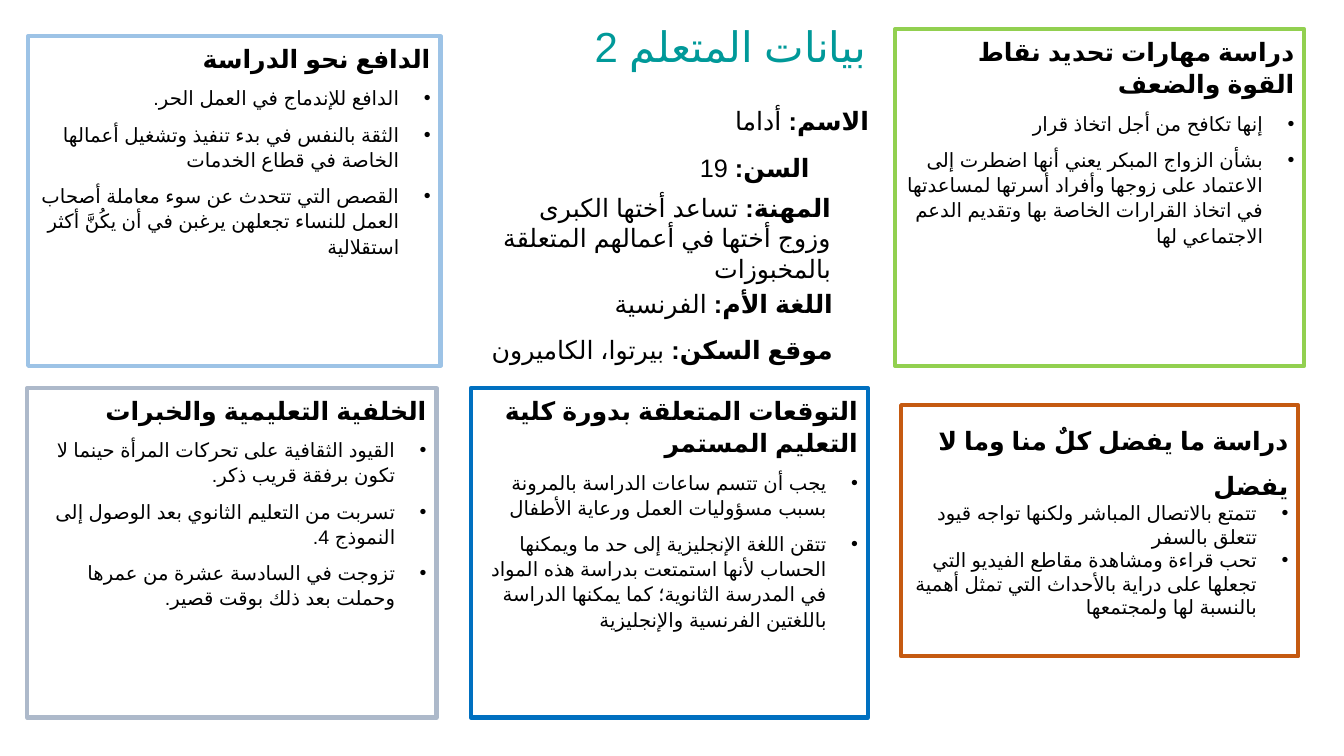
import pptx
import pptx.util
import pptx.dml.color
import pptx.enum.shapes
import pptx.enum.text
import pptx.oxml.ns
import lxml.etree

WIDE = pptx.util.Inches(13.33)
HIGH = pptx.util.Inches(7.5)
COLS = ROWS = 100
FONT = "Lato"
SCRIPT = "Arial"
HEAD, BODY, TITLE = 18, 14, 30
HUES = {
    "ink": "000000",
    "paper": "FFFFFF",
    "teal": "009999",
    "blue": "0070C0",
    "sky": "9DC3E6",
    "green": "92D050",
    "gray": "ADB9CA",
    "rust": "C55A11",
}

CARDS = [
    ("blue", (35.03, 51.33, 29.55, 43.6), "التوقعات المتعلقة بدورة كلية التعليم المستمر", [
        "يجب أن تتسم ساعات الدراسة بالمرونة بسبب مسؤوليات العمل ورعاية الأطفال",
        "تتقن اللغة الإنجليزية إلى حد ما ويمكنها الحساب لأنها استمتعت بدراسة هذه المواد "
        "في المدرسة الثانوية؛ كما يمكنها الدراسة باللغتين الفرنسية والإنجليزية",
    ]),
    ("sky", (2.1, 4.8, 30.68, 43.6), "الدافع نحو الدراسة", [
        "الدافع للإندماج في العمل الحر.",
        "الثقة بالنفس في بدء تنفيذ وتشغيل أعمالها الخاصة في قطاع الخدمات",
        "القصص التي تتحدث عن سوء معاملة أصحاب العمل للنساء تجعلهن يرغبن في أن يكُنَّ أكثر استقلالية",
    ]),
    ("green", (66.6, 3.87, 30.45, 44.53), "دراسة مهارات تحديد نقاط القوة والضعف", [
        "إنها تكافح من أجل اتخاذ قرار",
        "بشأن الزواج المبكر يعني أنها اضطرت إلى الاعتماد على زوجها وأفراد أسرتها لمساعدتها "
        "في اتخاذ القرارات الخاصة بها وتقديم الدعم الاجتماعي لها",
    ]),
    ("gray", (2.03, 51.33, 30.45, 43.6), "الخلفية التعليمية والخبرات", [
        "القيود الثقافية على تحركات المرأة حينما لا تكون برفقة قريب ذكر.",
        "تسربت من التعليم الثانوي بعد الوصول إلى النموذج 4.",
        "تزوجت في السادسة عشرة من عمرها وحملت بعد ذلك بوقت قصير.",
    ]),
]
LIKES = ("rust", (67.05, 53.6, 29.55, 33.2), "دراسة ما يفضل كلٌ منا وما لا يفضل", [
    "تتمتع بالاتصال المباشر ولكنها تواجه قيود تتعلق بالسفر",
    "تحب قراءة ومشاهدة مقاطع الفيديو التي تجعلها على دراية بالأحداث التي تمثل أهمية "
    "بالنسبة لها ولمجتمعها",
])
FACTS = [
    ((37.2, 13.33, 28.2, 5.33), "الاسم:", " أداما"),
    ((37.2, 19.47, 23.78, 5.33), "السن:", " 19"),
    ((36.68, 24.8, 25.88, 13.47), "المهنة:",
     " تساعد أختها الكبرى وزوج أختها في أعمالهم المتعلقة بالمخبوزات"),
    ((36.83, 37.47, 25.88, 5.33), "اللغة الأم:", " الفرنسية"),
    ((34.2, 43.6, 28.5, 5.33), "موقع السكن:", " بيرتوا، الكاميرون"),
]


def tint(hue):
    return pptx.dml.color.RGBColor.from_string(HUES[hue])


def place(area):
    left, top, width, height = area
    return (round(WIDE * left / COLS), round(HIGH * top / ROWS),
            round(WIDE * width / COLS), round(HIGH * height / ROWS))


def add_run(para, text, size, bold=False, hue="ink"):
    run = para.add_run()
    run.text = text
    run.font.name = FONT
    run.font.size = pptx.util.Pt(size)
    run.font.bold = bold
    run.font.color.rgb = tint(hue)
    props = run._r.get_or_add_rPr()
    props.set("lang", "ar-SA")
    face = lxml.etree.SubElement(props, pptx.oxml.ns.qn("a:cs"))
    face.set("typeface", SCRIPT)


def set_para(para, space=1.0, after=0):
    para.alignment = pptx.enum.text.PP_ALIGN.RIGHT
    para.line_spacing = space
    para.space_after = pptx.util.Pt(after)
    para._p.get_or_add_pPr().set("rtl", "1")


def add_dot(para):
    props = para._p.get_or_add_pPr()
    inset = pptx.util.Inches(0.31)
    props.set("marL", str(inset))
    props.set("indent", str(-inset))
    face = lxml.etree.SubElement(props, pptx.oxml.ns.qn("a:buFont"))
    face.set("typeface", "Arial")
    mark = lxml.etree.SubElement(props, pptx.oxml.ns.qn("a:buChar"))
    mark.set("char", "•")


def add_card(slide, hue, area, head, items, fill="paper", lead=1.07, space=1.07, after=8):
    card = slide.shapes.add_shape(pptx.enum.shapes.MSO_SHAPE.RECTANGLE, *place(area))
    card.shadow.inherit = False
    if fill:
        card.fill.solid()
        card.fill.fore_color.rgb = tint(fill)
    else:
        card.fill.background()
    card.line.color.rgb = tint(hue)
    card.line.width = pptx.util.Pt(3)
    frame = card.text_frame
    frame.word_wrap = True
    frame.vertical_anchor = pptx.enum.text.MSO_ANCHOR.TOP
    para = frame.paragraphs[0]
    set_para(para, lead, after)
    add_run(para, head, HEAD, True)
    for item in items:
        para = frame.add_paragraph()
        set_para(para, space, after)
        add_dot(para)
        add_run(para, item, BODY)


def add_label(slide, area, wrap=True, space=1.0):
    frame = slide.shapes.add_textbox(*place(area)).text_frame
    frame.word_wrap = wrap
    para = frame.paragraphs[0]
    set_para(para, space)
    return para


def add_fact(slide, area, name, value):
    para = add_label(slide, area)
    add_run(para, name, HEAD, True)
    add_run(para, value, HEAD)


def add_title(slide):
    para = add_label(slide, (43.2, 2.8, 21.98, 7.47), False, 0.9)
    para.space_before = pptx.util.Pt(10)
    add_run(para, "بيانات المتعلم 2", TITLE, hue="teal")


def main():
    deck = pptx.Presentation()
    deck.slide_width, deck.slide_height = WIDE, HIGH
    slide = deck.slides.add_slide(deck.slide_layouts[6])
    for card in CARDS:
        add_card(slide, *card)
    for fact in FACTS:
        add_fact(slide, *fact)
    add_title(slide)
    add_card(slide, *LIKES, fill=None, lead=1.5, space=1.0, after=0)
    deck.save("out.pptx")


if __name__ == "__main__":
    main()
